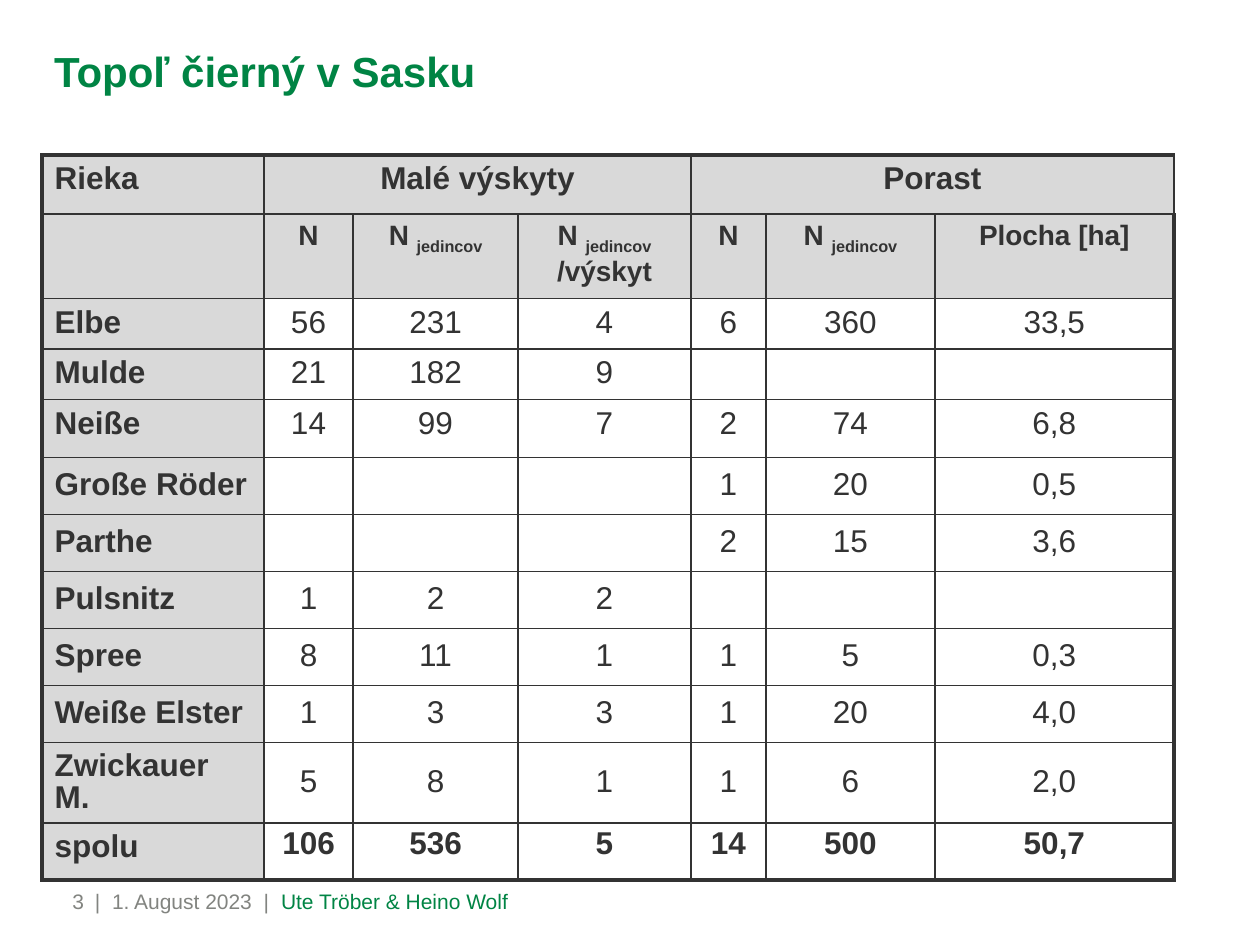
import lxml.etree
import pptx
import pptx.dml.color
import pptx.enum.text
import pptx.oxml.ns
import pptx.util

SCALE = 914400 / 126
GREEN, GREY, INK, SHADE = "008444", "828480", "333333", "D9D9D9"
ALIGN = pptx.enum.text.PP_ALIGN
ANCHOR = pptx.enum.text.MSO_ANCHOR

COLUMN_WIDTHS = [222, 89, 165, 173, 75, 169, 239]
ROW_HEIGHTS = [59, 50, 50, 50, 58] + [57] * 7
HEADER_ROWS = 2
SPACIOUS_ROWS = range(5, 11)
MERGED_HEADERS = [(1, 3), (4, 6)]
INDIVIDUALS = ["N ", "_jedincov"]
RIVERS = [
    ["Rieka", "Malé výskyty", "", "", "Porast", "", ""],
    ["", "N", INDIVIDUALS, INDIVIDUALS + ["\n", "/výskyt"], "N", INDIVIDUALS, "Plocha [ha]"],
    ["Elbe", "56", "231", "4", "6", "360", "33,5"],
    ["Mulde", "21", "182", "9", "", "", ""],
    ["Neiße", "14", "99", "7", "2", "74", "6,8"],
    ["Große Röder", "", "", "", "1", "20", "0,5"],
    ["Parthe", "", "", "", "2", "15", "3,6"],
    ["Pulsnitz", "1", "2", "2", "", "", ""],
    ["Spree", "8", "11", "1", "1", "5", "0,3"],
    ["Weiße Elster", "1", "3", "3", "1", "20", "4,0"],
    ["Zwickauer M.", "5", "8", "1", "1", "6", "2,0"],
    ["spolu", "106", "536", "5", "14", "500", "50,7"],
]


def px(length):
    return pptx.util.Emu(round(length * SCALE))


def rgb(value):
    return pptx.dml.color.RGBColor.from_string(value)


class SlideBuilder:
    """Holds the style and the current slide, and adds its elements."""

    def __init__(self, slide, font_name="Arial"):
        self.slide = slide
        self.font_name = font_name

    def add_spans(self, para, pieces, color=INK, **formats):
        for piece in pieces:
            if piece == "\n":
                para.add_line_break()
                continue
            span = para.add_run()
            span.text = piece.removeprefix("_")
            for name, value in {"name": self.font_name, **formats}.items():
                setattr(span.font, name, value)
            span.font.color.rgb = rgb(color)
            if piece.startswith("_"):
                span.font._element.set("baseline", "-25000")

    def text(self, left, top, width, height, parts, size, anchor, align=ALIGN.LEFT, bold=False):
        box = self.slide.shapes.add_textbox(*map(px, (left, top, width, height)))
        frame = box.text_frame
        layout = {"word_wrap": True, "vertical_anchor": anchor}
        layout.update(dict.fromkeys(["margin_left", "margin_top", "margin_right", "margin_bottom"], 0))
        for name, value in layout.items():
            setattr(frame, name, value)
        para = frame.paragraphs[0]
        para.alignment = align
        for words, color in parts:
            self.add_spans(para, [words], color, size=pptx.util.Pt(size), bold=bold)

    def border(self, cell, widths):
        properties = cell._tc.get_or_add_tcPr()
        for side, width in widths.items():
            line = lxml.etree.SubElement(
                properties, pptx.oxml.ns.qn(f"a:ln{side}"), w=str(pptx.util.Pt(width)))
            fill = lxml.etree.SubElement(line, pptx.oxml.ns.qn("a:solidFill"))
            lxml.etree.SubElement(fill, pptx.oxml.ns.qn("a:srgbClr"), val=INK)

    def table(self, left, top, rows, widths, heights):
        last_row, last_column = len(rows) - 1, len(widths) - 1
        table = self.slide.shapes.add_table(
            len(rows), len(widths), *map(px, (left, top, sum(widths), sum(heights)))).table
        table.first_row = table.horz_banding = False
        for column, width in zip(table.columns, widths):
            column.width = px(width)
        for row, height in zip(table.rows, heights):
            row.height = px(height)
        for first, last in MERGED_HEADERS:
            table.cell(0, first).merge(table.cell(0, last))
        for i, row in enumerate(rows):
            for j, content in enumerate(row):
                cell = table.cell(i, j)
                outer = {"L": j == 0, "R": j == last_column, "T": i == 0, "B": i == last_row}
                self.border(cell, {side: 2.25 if edge else 1 for side, edge in outer.items()})
                if j == 0 or i < HEADER_ROWS:
                    cell.fill.solid()
                    cell.fill.fore_color.rgb = rgb(SHADE)
                else:
                    cell.fill.background()
                if i in SPACIOUS_ROWS:
                    cell.vertical_anchor = ANCHOR.MIDDLE
                para = cell.text_frame.paragraphs[0]
                para.alignment = ALIGN.CENTER if j else ALIGN.LEFT
                if i in SPACIOUS_ROWS or (i == last_row and j):
                    para.line_spacing = 0.9
                if content:
                    pieces = [content] if isinstance(content, str) else content
                    self.add_spans(para, pieces, size=pptx.util.Pt(16 if i == 1 else 18),
                                   bold=j == 0 or i < HEADER_ROWS or i == last_row)


def main():
    deck = pptx.Presentation()
    deck.slide_width, deck.slide_height = px(1260), px(945)
    page = SlideBuilder(deck.slides.add_slide(deck.slide_layouts[6]))
    page.text(95, 858, 625, 87,
              [("|  1. August 2023  |  ", GREY), ("Ute Tröber & Heino Wolf", GREEN)],
              12, ANCHOR.MIDDLE)
    page.text(0, 858, 84, 87, [("3", GREY)], 12, ANCHOR.MIDDLE, ALIGN.RIGHT)
    page.table(42, 155, RIVERS, COLUMN_WIDTHS, ROW_HEIGHTS)
    page.text(54, 37, 622, 59, [("Topoľ čierný v Sasku", GREEN)], 24, ANCHOR.BOTTOM, bold=True)
    deck.save("out.pptx")


if __name__ == "__main__":
    main()
